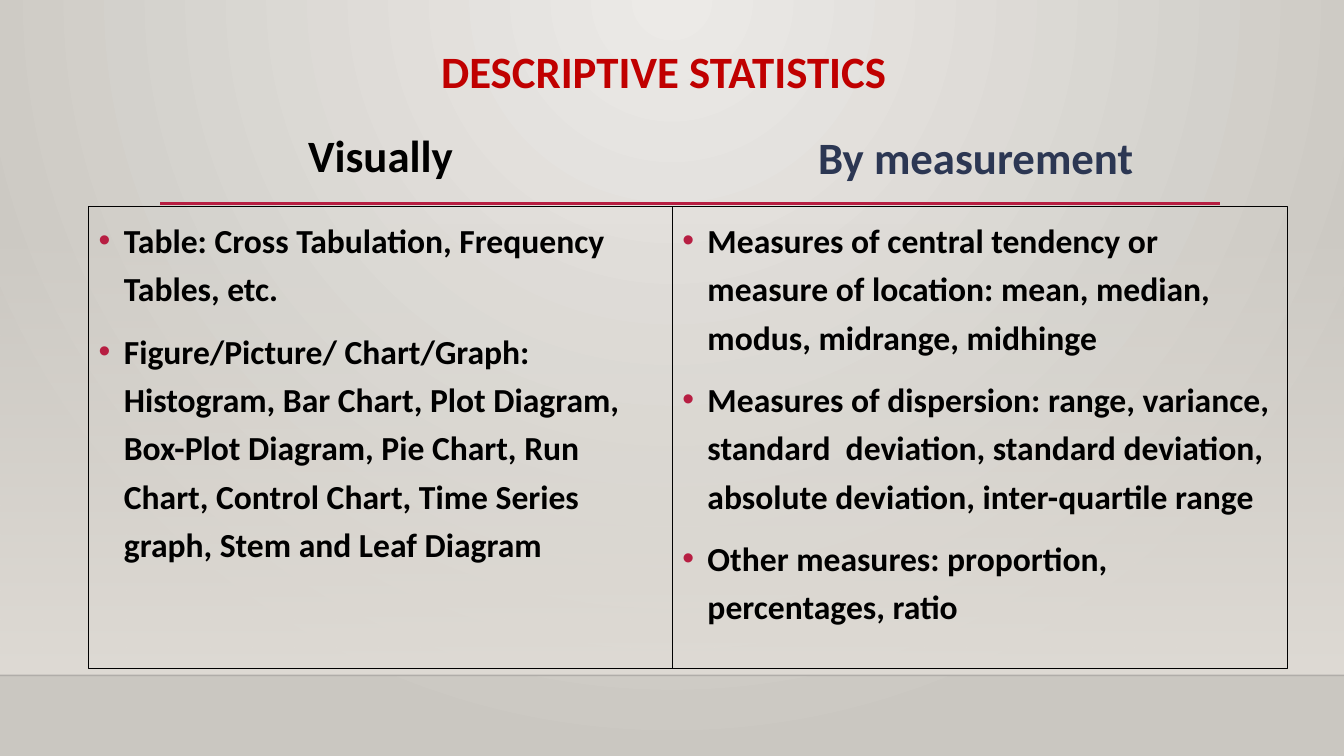
from dataclasses import dataclass

from lxml import etree
from pptx import Presentation
from pptx.dml.color import RGBColor
from pptx.enum.shapes import MSO_CONNECTOR as Connector, MSO_SHAPE as Shape
from pptx.enum.text import MSO_ANCHOR as Anchor, PP_ALIGN as Align
from pptx.oxml import parse_xml
from pptx.oxml.ns import nsdecls, qn
from pptx.util import Pt


@dataclass(frozen=True)
class Theme:
    font: str = "Calibri"
    ink: str = "000000"
    title: str = "C00000"
    navy: str = "2C3753"
    accent: str = "B71E42"
    glow: str = "ECEAE7"
    edge: str = "CAC7C1"
    floor: str = "DFDBD5"
    floor_line: str = "000001"
    heading_size: int = 32
    body_size: int = 24


THEME = Theme()

# Layout in points
WIDTH, HEIGHT = 960, 540
FLOOR_TOP, FLOOR_BOTTOM = 159, 482.4
PANEL_TOP, PANEL_HEIGHT = 147.6, 329.8

COLUMNS = [
    dict(
        heading="Visually", color=THEME.ink, left=63.4, width=416.9,
        heading_top=87.8, heading_width=416.9,
        items=[
            "Table: Cross Tabulation, Frequency Tables, etc.",
            "Figure/Picture/ Chart/Graph: Histogram, Bar Chart, Plot Diagram, "
            "Box-Plot Diagram, Pie Chart, Run Chart, Control Chart, "
            "Time Series graph, Stem and Leaf Diagram",
        ],
    ),
    dict(
        heading="By measurement", color=THEME.navy, left=480.3, width=439.2,
        heading_top=89.3, heading_width=433.4,
        items=[
            "Measures of central tendency or measure of location: "
            "mean, median, modus, midrange, midhinge",
            "Measures of dispersion: range, variance, standard  deviation, "
            "standard deviation, absolute deviation, inter-quartile range",
            "Other measures: proportion, percentages, ratio",
        ],
    ),
]


def assign(target, **values):
    for name, value in values.items():
        setattr(target, name, value)


def frame(left, top, width, height):
    return [Pt(value) for value in (left, top, width, height)]


def gradient(stops, direction):
    """Build a gradient fill from (position, colour, opacity) stops."""
    marks = "".join(
        f'<a:gs pos="{position * 1000}"><a:srgbClr val="{color}">'
        f'<a:alpha val="{opacity * 1000}"/></a:srgbClr></a:gs>'
        for position, color, opacity in stops
    )
    return parse_xml(
        f'<a:gradFill {nsdecls("a")} rotWithShape="1">'
        f"<a:gsLst>{marks}</a:gsLst>{direction}</a:gradFill>"
    )


def paint_background(page):
    fill = page.background.fill
    fill.solid()
    fill.fore_color.rgb = RGBColor.from_string(THEME.edge)
    radial = (
        '<a:path path="circle"><a:fillToRect l="43000" t="0" r="43000" '
        'b="100000"/></a:path>'
    )
    solid = page.background._cSld.find(".//" + qn("a:solidFill"))
    solid.getparent().replace(
        solid, gradient([(0, THEME.glow, 100), (100, THEME.edge, 100)], radial)
    )


def add_floor(page):
    floor = page.shapes.add_shape(
        Shape.RECTANGLE, *frame(0, FLOOR_TOP, WIDTH, FLOOR_BOTTOM - FLOOR_TOP)
    )
    floor.shadow.inherit = False
    floor.line.fill.background()
    fade = [(0, THEME.floor, 0), (100, THEME.floor, 100)]
    outline = floor._element.spPr.find(qn("a:ln"))
    outline.addprevious(gradient(fade, '<a:lin ang="5400000" scaled="0"/>'))


def add_rule(page, start, end, y, color, weight, opacity=100):
    rule = page.shapes.add_connector(
        Connector.STRAIGHT, Pt(start), Pt(y), Pt(end), Pt(y)
    )
    rule.line.color.rgb = RGBColor.from_string(color)
    rule.line.width = Pt(weight)
    properties = rule._element.spPr
    if opacity < 100:
        tint = properties.find(".//" + qn("a:srgbClr"))
        etree.SubElement(tint, qn("a:alpha"), val=str(opacity * 1000))
    etree.SubElement(properties, qn("a:effectLst"))


def style_text(para, size, color):
    assign(para.font, name=THEME.font, size=Pt(size), bold=True)
    para.font.color.rgb = RGBColor.from_string(color)


def add_heading(page, text, place, color, anchor=Anchor.TOP, spacing=1.0):
    box = page.shapes.add_textbox(*frame(*place))
    assign(box.text_frame, word_wrap=True, vertical_anchor=anchor)
    para = box.text_frame.paragraphs[0]
    assign(para, text=text, alignment=Align.CENTER, line_spacing=spacing)
    style_text(para, THEME.heading_size, color)


def add_bullet(para):
    properties = para._p.get_or_add_pPr()
    properties.set("marL", str(Pt(18)))
    properties.set("indent", str(Pt(-18)))
    color = etree.SubElement(properties, qn("a:buClr"))
    etree.SubElement(color, qn("a:srgbClr"), val=THEME.accent)
    etree.SubElement(properties, qn("a:buFont"), typeface="Arial")
    etree.SubElement(properties, qn("a:buChar"), char="•")


def add_panel(page, left, width, items):
    panel = page.shapes.add_shape(
        Shape.RECTANGLE, *frame(left, PANEL_TOP, width, PANEL_HEIGHT)
    )
    panel.shadow.inherit = False
    panel.fill.background()
    panel.line.color.rgb = RGBColor.from_string(THEME.ink)
    panel.line.width = Pt(0.75)
    text = panel.text_frame
    assign(text, word_wrap=True, vertical_anchor=Anchor.TOP)
    for index, item in enumerate(items):
        para = text.add_paragraph() if index else text.paragraphs[0]
        add_bullet(para)
        assign(para, text=item, alignment=Align.LEFT, line_spacing=1.2,
               space_before=Pt(10 if index else 0))
        style_text(para, THEME.body_size, THEME.ink)


def main():
    deck = Presentation()
    assign(deck, slide_width=Pt(WIDTH), slide_height=Pt(HEIGHT))
    page = deck.slides.add_slide(deck.slide_layouts[6])

    # Backdrop and rules
    paint_background(page)
    add_floor(page)
    add_rule(page, 0, WIDTH, FLOOR_BOTTOM, THEME.floor_line, 1, opacity=20)
    add_rule(page, 114.5, 871.2, 145.4, THEME.accent, 2.5)

    # Title
    add_heading(page, "DESCRIPTIVE STATISTICS", (96.5, 28.1, 755.3, 49),
                THEME.title, Anchor.MIDDLE, 0.9)

    # Two columns
    for column in COLUMNS:
        add_panel(page, column["left"], column["width"], column["items"])
        place = (column["left"], column["heading_top"],
                 column["heading_width"], 46.1)
        add_heading(page, column["heading"], place, column["color"])

    deck.save("out.pptx")


if __name__ == "__main__":
    main()
